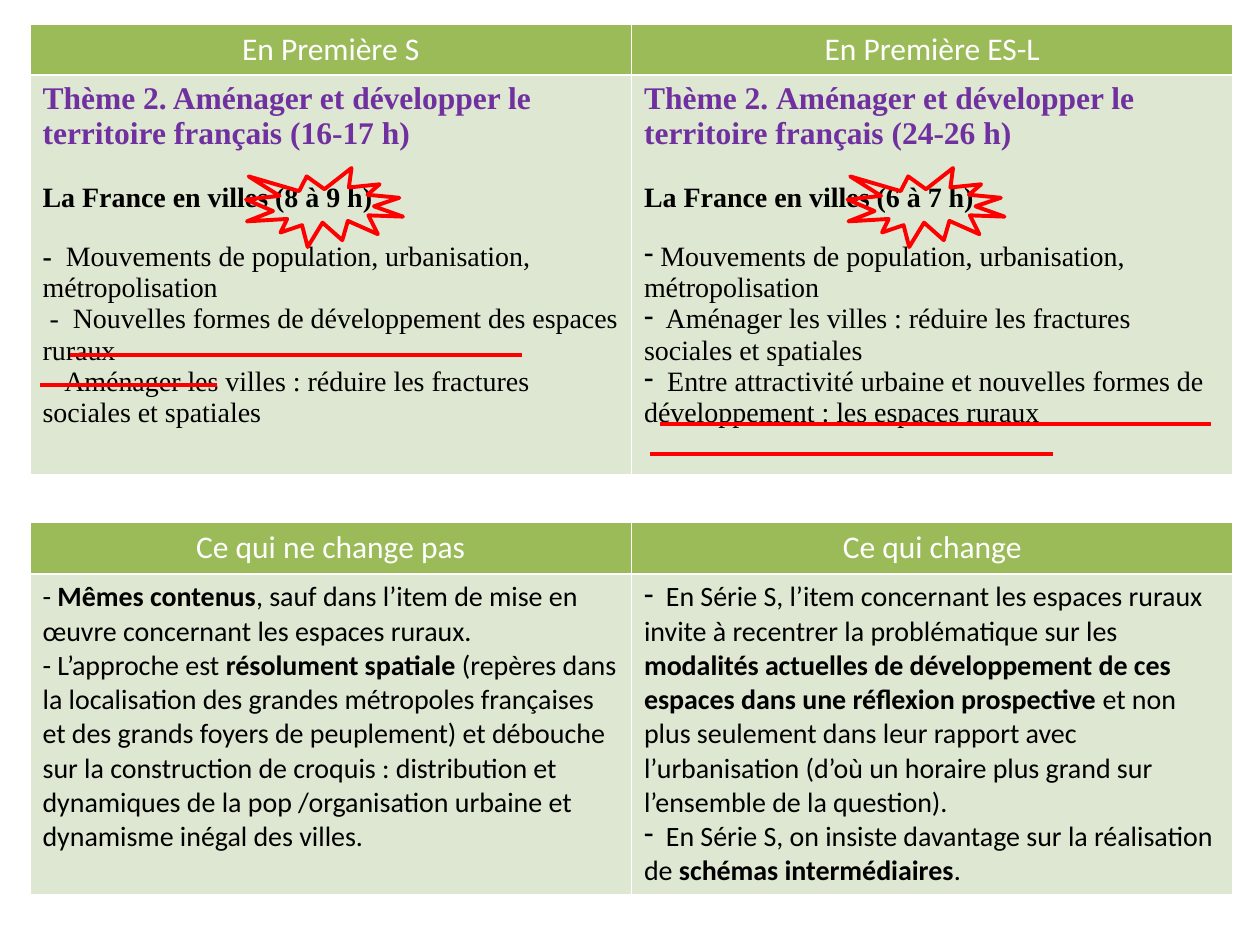
from dataclasses import dataclass
from lxml.etree import SubElement as Sub
from pptx import Presentation
from pptx.dml.color import RGBColor as Rgb
from pptx.enum.shapes import MSO_CONNECTOR as Link, MSO_SHAPE as Kind
from pptx.enum.text import PP_ALIGN as Align
from pptx.oxml.ns import qn
from pptx.util import Emu, Pt


@dataclass(frozen=True)
class Theme:
    head: str = "9BBB59"
    body: str = "DEE7D1"
    white: str = "FFFFFF"
    ink: str = "000000"
    violet: str = "7030A0"
    red: str = "FF0000"
    sans: str = "Calibri"
    serif: str = "Times New Roman"
    big: int = 18
    text: int = 16
    rule: int = 1
    mark: float = 2.25


T = Theme()


def px(n):
    return Emu(round(n * 914400 / 126))


@dataclass
class Para:
    text: str  # asterisks enclose bold words
    size: int = T.text
    color: str = T.ink
    face: str = T.sans
    gap: int = 0
    dash: bool = False
    mid: bool = False


def write(para, item):
    para.space_before = Pt(item.gap)
    para.alignment = Align.CENTER if item.mid else Align.LEFT
    font = para.font
    font.name, font.size = item.face, Pt(item.size)
    font.color.rgb = Rgb.from_string(item.color)
    parts = item.text.split("*")
    for i, part in enumerate(parts):
        if part:
            run = para.add_run()
            run.text = part
            run.font.bold = i % 2 == 1
    if item.dash:
        props = para._p.get_or_add_pPr()
        props.set("marL", "0")
        props.set("indent", "0")
        bullet = props.makeelement(qn("a:buChar"), {"char": "-"})
        props.find(qn("a:defRPr")).addprevious(bullet)


def fill_cell(cell, items, color):
    # Borders come before the fill in the cell properties
    props = cell._tc.get_or_add_tcPr()
    for side in "LRTB":
        line = Sub(props, qn(f"a:ln{side}"), w=str(Pt(T.rule)))
        Sub(Sub(line, qn("a:solidFill")), qn("a:srgbClr"), val=T.white)
    cell.fill.solid()
    cell.fill.fore_color.rgb = Rgb.from_string(color)
    frame = cell.text_frame
    for i, item in enumerate(items):
        write(frame.add_paragraph() if i else frame.paragraphs[0], item)


def add_grid(slide, box, top, heads, bodies):
    x, y, w, h = box
    table = slide.shapes.add_table(2, 2, px(x), px(y), px(w), px(h)).table
    table.first_row = table.horz_banding = False
    for row, high in zip(table.rows, (top, h - top)):
        row.height = px(high)
    for i, (head, body) in enumerate(zip(heads, bodies)):
        table.columns[i].width = px(w / 2)
        title = Para(head, T.big, T.white, mid=True)
        fill_cell(table.cell(0, i), [title], T.head)
        fill_cell(table.cell(1, i), body, T.body)


def add_burst(slide, box):
    burst = slide.shapes.add_shape(Kind.EXPLOSION1, *map(px, box))
    burst.shadow.inherit = False
    burst.fill.background()
    burst.line.color.rgb = Rgb.from_string(T.red)
    burst.line.width = Pt(T.mark)


def add_line(slide, x, y, w):
    line = slide.shapes.add_connector(Link.STRAIGHT, px(x), px(y), px(x + w), px(y))
    line.line.color.rgb = Rgb.from_string(T.red)
    line.line.width = Pt(T.mark)
    Sub(line._element.spPr, qn("a:effectLst"))


def theme_part(title, part, points, dash):
    return [
        Para(f"*{title}*", T.big, T.violet, T.serif),
        Para(f"*{part}*", face=T.serif, gap=18),
    ] + [
        Para(point, face=T.serif, gap=0 if i else 16, dash=dash)
        for i, point in enumerate(points)
    ]


def add_themes(slide, box):
    left = theme_part(
        "Thème 2. Aménager et développer le territoire français (16-17 h)",
        "La France en villes (8 à 9 h)",
        ["*-  *Mouvements de population, urbanisation, métropolisation",
         " -  Nouvelles formes de développement des espaces ruraux",
         "-  Aménager les villes : réduire les fractures sociales et spatiales"],
        False)
    right = theme_part(
        "Thème 2.\u00a0Aménager et développer le territoire français (24-26 h)",
        "La France en villes (6 à 7 h)",
        [" Mouvements de population, urbanisation, métropolisation",
         "  Aménager les villes : réduire les fractures sociales et spatiales",
         "  Entre attractivité urbaine et nouvelles formes de développement : "
         "les espaces ruraux"],
        True)
    add_grid(slide, box, 50, ("En Première S", "En Première ES-L"), (left, right))


def add_marks(slide, box):
    x, y, w, _ = box
    # Bursts around the hours of each column
    for i in range(2):
        add_burst(slide, (x + 216 + i * w / 2, y + 144, 157, 79))
    # Underlines of the rural topics
    for dx, dy, wide in ((40, 331, 452), (10, 361, 177),
                         (630, 400, 551), (620, 430, 403)):
        add_line(slide, x + dx, y + dy, wide)


def add_changes(slide, box):
    same = [
        Para("- *Mêmes contenus*, sauf dans l’item de mise en œuvre concernant "
             "les espaces ruraux."),
        Para("- L’approche est *résolument spatiale *(repères dans la localisation "
             "des grandes métropoles françaises et des grands foyers de peuplement) "
             "et débouche sur la construction de croquis : distribution et dynamiques "
             "de la pop /organisation urbaine et dynamisme inégal des villes."),
    ]
    new = [
        Para("  En Série S, l’item concernant les espaces ruraux invite à recentrer "
             "la problématique sur les *modalités actuelles de développement de ces "
             "espaces dans une réflexion prospective *et non plus seulement dans leur "
             "rapport avec l’urbanisation (d’où un horaire plus grand sur l’ensemble "
             "de la question).", dash=True),
        Para("  En Série S, on insiste davantage sur la réalisation de "
             "*schémas intermédiaires*.", dash=True),
    ]
    add_grid(slide, box, 52, ("Ce qui ne change pas", "Ce qui change"), (same, new))


def main():
    deck = Presentation()
    deck.slide_width, deck.slide_height = px(1260), px(945)
    slide = deck.slides.add_slide(deck.slide_layouts[6])
    upper = (30, 24, 1203, 450)
    add_themes(slide, upper)
    add_changes(slide, (30, 522, 1203, 372))
    add_marks(slide, upper)
    deck.save("out.pptx")


if __name__ == "__main__":
    main()
